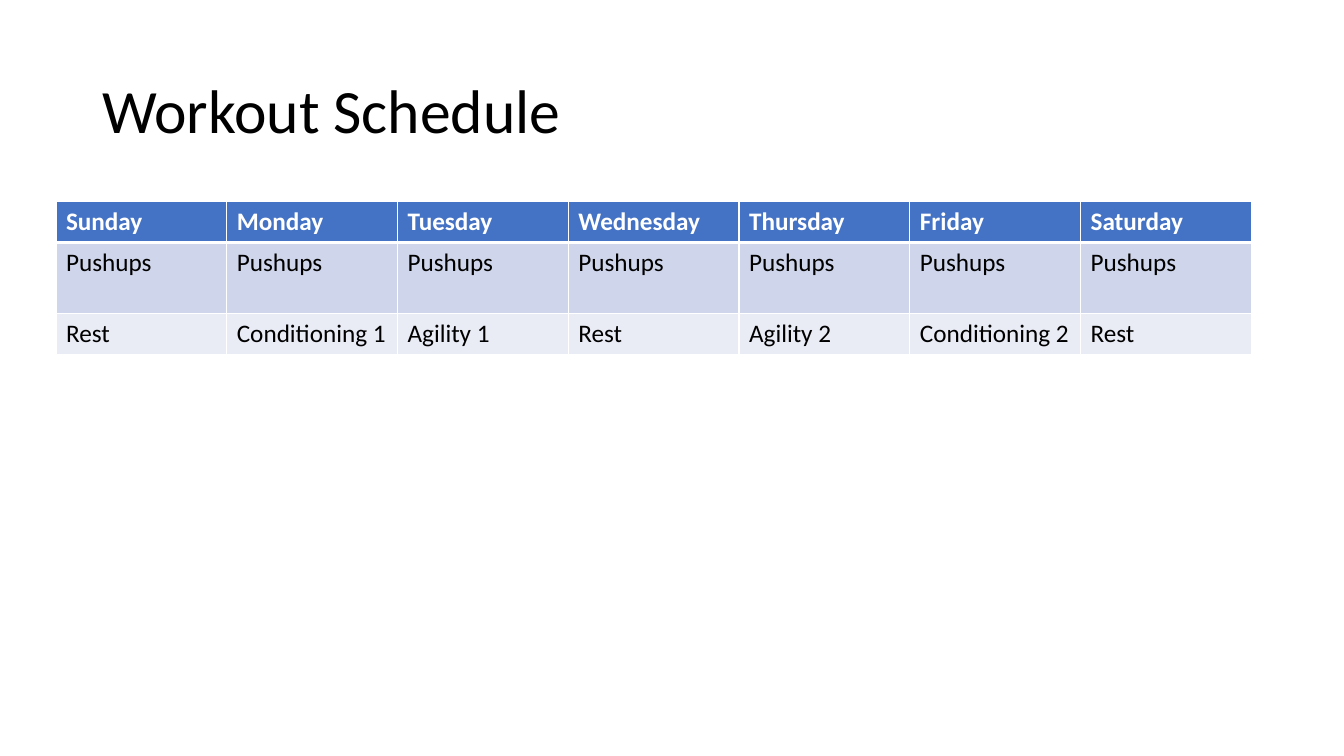
from lxml.etree import SubElement
from pptx import Presentation
from pptx.dml.color import RGBColor as Color
from pptx.enum.text import MSO_ANCHOR as Anchor
from pptx.oxml.ns import qn
from pptx.util import Pt

TITLE = "Workout Schedule"
SCHEDULE = [
    ["Sunday", "Monday", "Tuesday", "Wednesday", "Thursday", "Friday", "Saturday"],
    ["Pushups"] * 7,
    ["Rest", "Conditioning 1", "Agility 1", "Rest", "Agility 2", "Conditioning 2", "Rest"],
]
COLORS = {"white": "FFFFFF", "black": "000000", "header": "4472C4",
          "exercise": "CFD5EA", "session": "E9EBF5"}
TITLE_FORMAT = {"name": "Calibri", "size": Pt(44), "bold": False}
HEADER_FORMAT = {"name": "Calibri", "size": Pt(18), "bold": True}
BODY_FORMAT = {**HEADER_FORMAT, "bold": False}
ROWS = [
    {"height": 29.2, "fill": "header", "text": "white", "format": HEADER_FORMAT, "top": 1, "bottom": 3},
    {"height": 50.8, "fill": "exercise", "text": "black", "format": BODY_FORMAT, "top": 3, "bottom": 1},
    {"height": 29.2, "fill": "session", "text": "black", "format": BODY_FORMAT, "top": 1, "bottom": 1},
]
TITLE_BOX = (66, 28.8, 828, 104.4)
TABLE_LEFT, TABLE_TOP, COLUMN_WIDTH = 40, 144, 122


def write(paragraph, text, color, text_format):
    run = paragraph.add_run()
    run.text = text
    for name, value in text_format.items():
        setattr(run.font, name, value)
    run.font.color.rgb = Color.from_string(COLORS[color])


def add_borders(cell, top, bottom):
    properties = cell._tc.get_or_add_tcPr()
    for tag, width in {"a:lnL": 1, "a:lnR": 1, "a:lnT": top, "a:lnB": bottom}.items():
        line = SubElement(properties, qn(tag), w=str(Pt(width)))
        fill = SubElement(line, qn("a:solidFill"))
        SubElement(fill, qn("a:srgbClr"), val=COLORS["white"])


def add_title(slide):
    frame = slide.shapes.add_textbox(*map(Pt, TITLE_BOX)).text_frame
    frame.word_wrap = True
    frame.vertical_anchor = Anchor.MIDDLE
    paragraph = frame.paragraphs[0]
    paragraph.line_spacing = 0.9
    write(paragraph, TITLE, "black", TITLE_FORMAT)


def add_schedule(slide):
    column_count = len(SCHEDULE[0])
    height = sum(row["height"] for row in ROWS)
    table = slide.shapes.add_table(
        len(ROWS), column_count, Pt(TABLE_LEFT), Pt(TABLE_TOP),
        Pt(COLUMN_WIDTH * column_count), Pt(height)).table
    for column in table.columns:
        column.width = Pt(COLUMN_WIDTH)
    for table_row, row, texts in zip(table.rows, ROWS, SCHEDULE):
        table_row.height = Pt(row["height"])
        for cell, text in zip(table_row.cells, texts):
            add_borders(cell, row["top"], row["bottom"])
            cell.fill.solid()
            cell.fill.fore_color.rgb = Color.from_string(COLORS[row["fill"]])
            write(cell.text_frame.paragraphs[0], text, row["text"], row["format"])


def main():
    presentation = Presentation()
    presentation.slide_width, presentation.slide_height = Pt(960), Pt(540)
    slide = presentation.slides.add_slide(presentation.slide_layouts[6])
    add_title(slide)
    add_schedule(slide)
    presentation.save("out.pptx")


if __name__ == "__main__":
    main()
